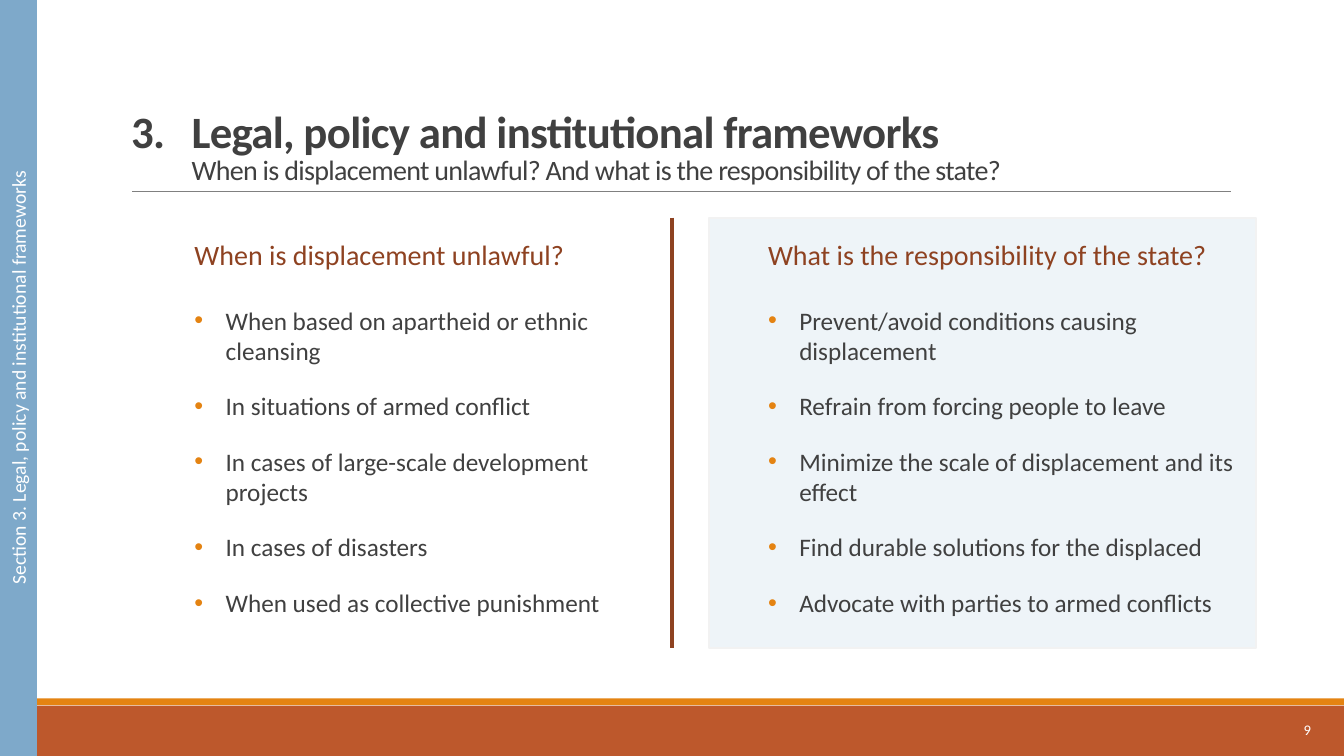
from copy import deepcopy
from dataclasses import dataclass

from lxml import etree
from pptx import Presentation
from pptx import util as u
from pptx.dml.color import RGBColor
from pptx.enum import shapes, text
from pptx.oxml.ns import qn

WHITE = RGBColor(0xFF, 0xFF, 0xFF)
INK = RGBColor(0x40, 0x40, 0x40)
GREY = RGBColor(0x80, 0x80, 0x80)
RUST = RGBColor(0xBD, 0x58, 0x2C)
ORANGE = RGBColor(0xE4, 0x83, 0x12)
BROWN = RGBColor(0x8E, 0x42, 0x21)
BLUE = RGBColor(0x7E, 0xA9, 0xCA)
PALE_BLUE = RGBColor(0xEE, 0xF4, 0xF8)
PALE_GREY = RGBColor(0xF2, 0xF2, 0xF2)

FONT = "Calibri"
WIDTH, HEIGHT = u.Inches(13.33), u.Inches(7.5)
SECTION = "Legal, policy and institutional frameworks"
SUBTITLE = "When is displacement unlawful? And what is the responsibility of the state?"


@dataclass(frozen=True)
class Area:
    """A rectangle in percent of the slide's width and height."""
    left: float
    top: float
    width: float
    height: float

    def emu(self) -> tuple[int, int, int, int]:
        return (across(self.left), down(self.top), across(self.width), down(self.height))


@dataclass(frozen=True)
class Block:
    area: Area
    fill: RGBColor
    line: RGBColor | None = None


@dataclass(frozen=True)
class Rule:
    start: tuple[float, float]
    end: tuple[float, float]
    color: RGBColor
    weight: float


@dataclass(frozen=True)
class Column:
    area: Area
    heading: str
    points: tuple[str, ...]


PANEL = Area(52.74, 28.8, 40.74, 56.93)
SIDEBAR = Block(Area(0, 0, 2.7, 100), BLUE, BLUE)
BLOCKS = (
    Block(Area(0, 93.33, 100, 6.67), RUST),
    Block(Area(0, 92.4, 100, 0.87), ORANGE),
    Block(PANEL, PALE_BLUE, PALE_GREY),
)
RULES = (
    Rule((9.83, 25.33), (91.6, 25.33), GREY, 0.5),
    Rule((50, PANEL.top), (50, PANEL.top + PANEL.height), BROWN, 2.25),
)
COLUMNS = (
    Column(Area(13.73, 30.8, 33.08, 52), "When is displacement unlawful?", (
        "When based on apartheid or ethnic cleansing",
        "In situations of armed conflict",
        "In cases of large-scale development projects",
        "In cases of disasters",
        "When used as collective punishment",
    )),
    Column(Area(56.41, 30.8, 37.51, 52), "What is the responsibility of the state?", (
        "Prevent/avoid conditions causing displacement",
        "Refrain from forcing people to leave",
        "Minimize the scale of displacement and its effect",
        "Find durable solutions for the displaced",
        "Advocate with parties to armed conflicts",
    )),
)


def across(percent: float) -> int:
    return round(WIDTH * percent / 100)


def down(percent: float) -> int:
    return round(HEIGHT * percent / 100)


def style(span, size: float, color: RGBColor, bold: bool = False) -> None:
    span.font.name = FONT
    span.font.size = u.Pt(size)
    span.font.bold = bold
    span.font.color.rgb = color


def hang(para, indent: float) -> None:
    """Give a paragraph a hanging indent in inches."""
    properties = para._p.get_or_add_pPr()
    properties.set("marL", str(u.Inches(indent)))
    properties.set("indent", str(-u.Inches(indent)))


def add_bullet(para) -> None:
    properties = para._p.get_or_add_pPr()
    color = etree.SubElement(properties, qn("a:buClr"))
    etree.SubElement(color, qn("a:srgbClr"), val=str(ORANGE))
    etree.SubElement(properties, qn("a:buFont"), typeface="Arial")
    etree.SubElement(properties, qn("a:buChar"), char="•")


def draw_block(page, block: Block):
    box = page.shapes.add_shape(shapes.MSO_SHAPE.RECTANGLE, *block.area.emu())
    box.shadow.inherit = False
    box.fill.solid()
    box.fill.fore_color.rgb = block.fill
    if block.line is None:
        box.line.fill.background()
    else:
        box.line.color.rgb = block.line
        box.line.width = u.Pt(1.25)
    return box


def draw_rule(page, rule: Rule) -> None:
    line = page.shapes.add_connector(
        shapes.MSO_CONNECTOR.STRAIGHT,
        across(rule.start[0]), down(rule.start[1]), across(rule.end[0]), down(rule.end[1]))
    line.line.color.rgb = rule.color
    line.line.width = u.Pt(rule.weight)
    etree.SubElement(line._element.spPr, qn("a:effectLst"))


def draw_title(page) -> None:
    title = page.shapes.title
    title.left, title.top, title.width, title.height = Area(9, 4.13, 82.5, 21.2).emu()
    frame = title.text_frame
    frame.word_wrap = True
    frame.auto_size = text.MSO_AUTO_SIZE.NONE
    frame.vertical_anchor = text.MSO_ANCHOR.BOTTOM
    para = frame.paragraphs[0]
    para.text = f"3.\t{SECTION}\v{SUBTITLE}"
    para.alignment = text.PP_ALIGN.LEFT
    para.line_spacing = 0.85
    hang(para, 0.6)
    heading, subtitle = para.runs
    style(heading, 32, INK, bold=True)
    style(subtitle, 20, INK)
    for span in para.runs:
        span.font._element.set("spc", "-50")
    # The line break takes the heading's size.
    para._p.find(qn("a:br")).append(deepcopy(heading.font._element))


def draw_sidebar(page) -> None:
    frame = draw_block(page, SIDEBAR).text_frame
    frame._txBody.bodyPr.set("vert", "vert270")
    frame.vertical_anchor = text.MSO_ANCHOR.MIDDLE
    para = frame.paragraphs[0]
    para.text = f"Section 3. {SECTION}"
    para.alignment = text.PP_ALIGN.CENTER
    style(para.runs[0], 14, WHITE)


def draw_page_number(page) -> None:
    frame = page.shapes.add_textbox(*Area(87.55, 93.87, 10.73, 5.33).emu()).text_frame
    frame.word_wrap = True
    frame.vertical_anchor = text.MSO_ANCHOR.MIDDLE
    para = frame.paragraphs[0]
    para.text = "9"
    para.alignment = text.PP_ALIGN.RIGHT
    style(para.runs[0], 10.5, WHITE)


def draw_column(page, column: Column) -> None:
    frame = page.shapes.add_textbox(*column.area.emu()).text_frame
    frame.word_wrap = True
    frame.auto_size = text.MSO_AUTO_SIZE.SHAPE_TO_FIT_TEXT
    heading = frame.paragraphs[0]
    heading.text = column.heading
    heading.space_after = u.Pt(24)
    style(heading.runs[0], 20, BROWN)
    for point in column.points:
        para = frame.add_paragraph()
        para.text = point
        para.space_after = u.Pt(18)
        hang(para, 0.31)
        add_bullet(para)
        style(para.runs[0], 18, INK)


def main() -> None:
    deck = Presentation()
    deck.slide_width, deck.slide_height = WIDTH, HEIGHT
    page = deck.slides.add_slide(deck.slide_layouts.get_by_name("Title Only"))
    draw_title(page)
    for block in BLOCKS:
        draw_block(page, block)
    draw_sidebar(page)
    draw_page_number(page)
    for rule in RULES:
        draw_rule(page, rule)
    for column in COLUMNS:
        draw_column(page, column)
    deck.save("out.pptx")


if __name__ == "__main__":
    main()
